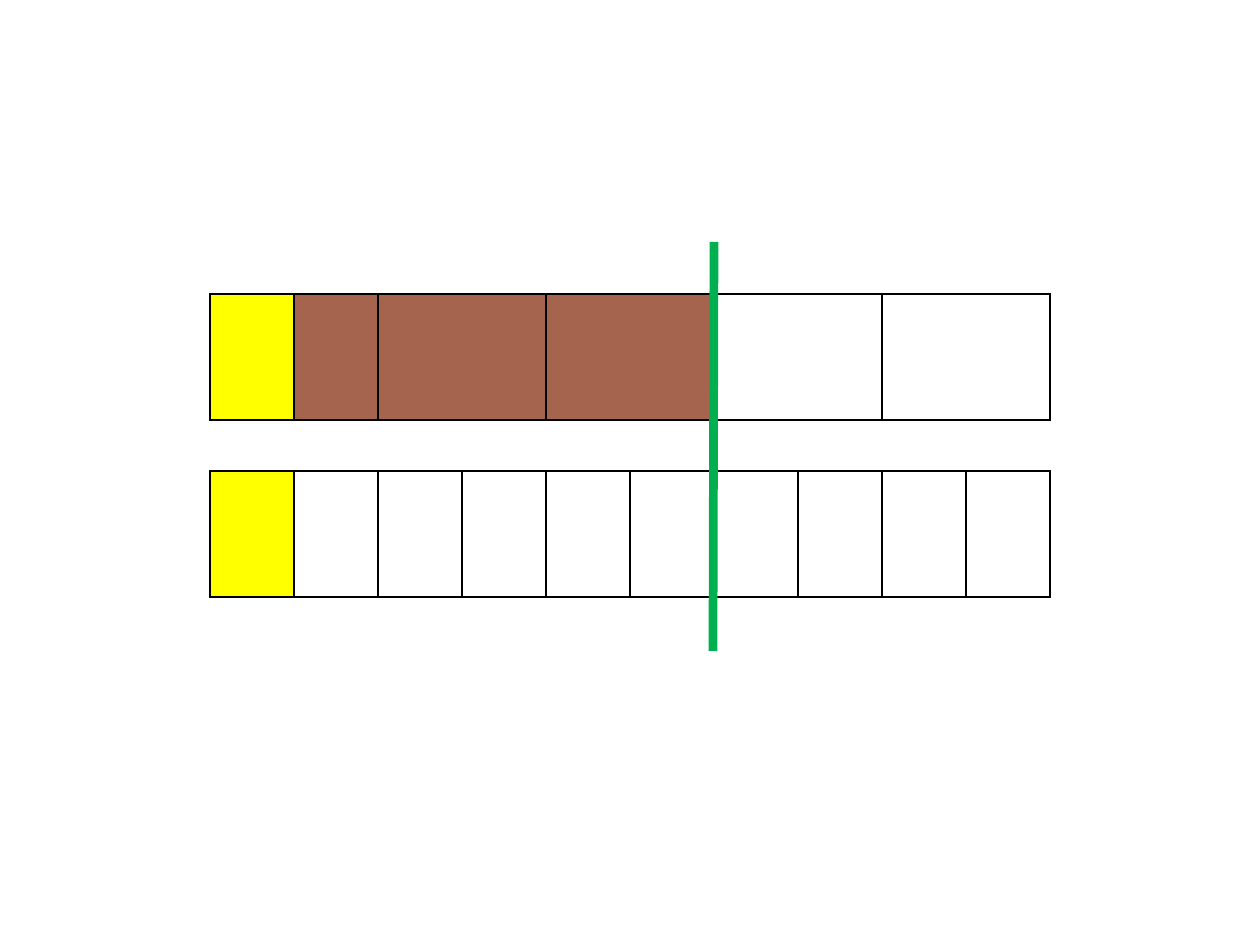
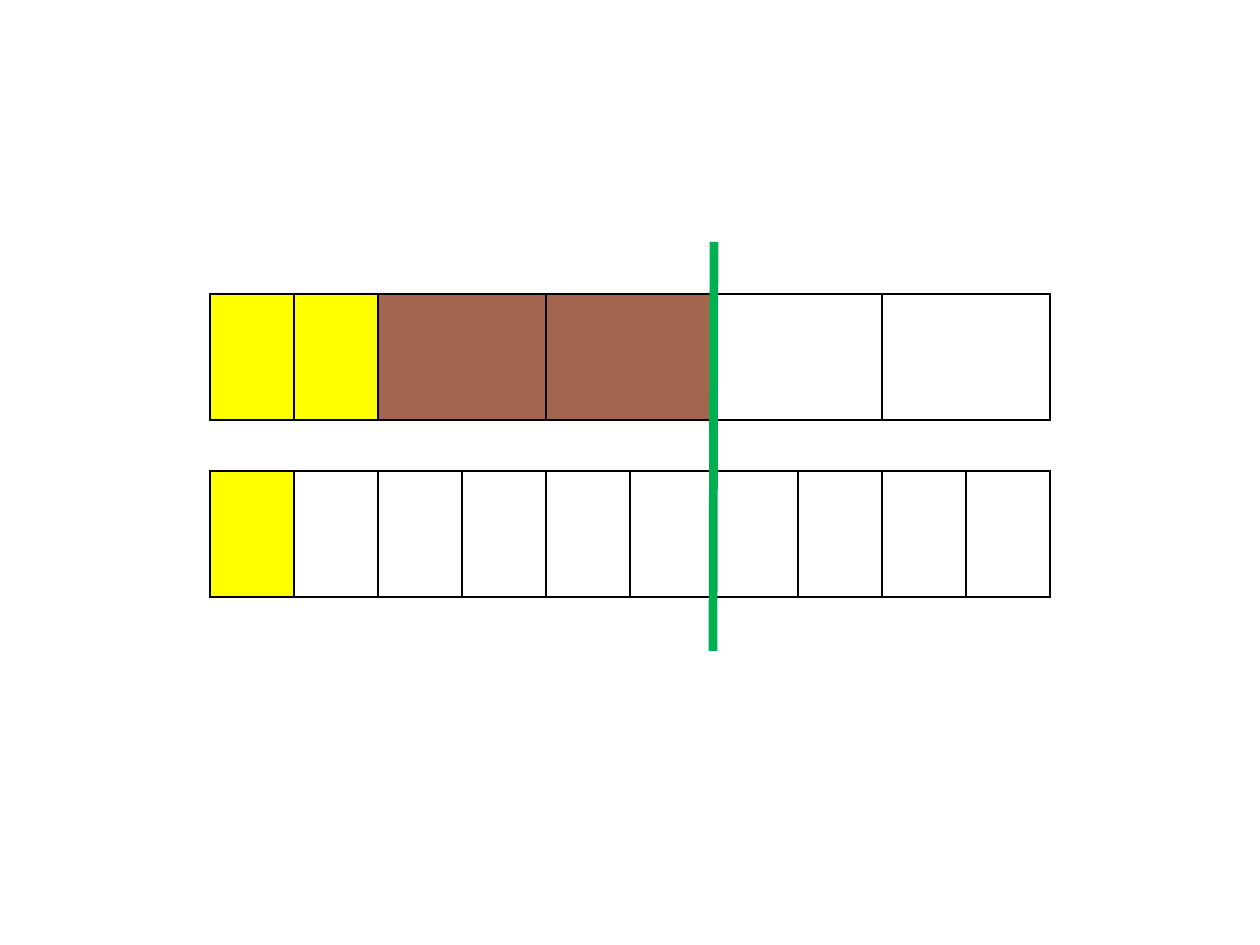
"""Build two slides that compare fifths with tenths on shaded bars."""
from dataclasses import dataclass

from lxml import etree
from pptx import Presentation
from pptx import util as u
from pptx.dml import color
from pptx.enum import shapes
from pptx.oxml import ns

SCALE = 914400 / 126


@dataclass(frozen=True)
class Theme:
    """Colours and line widths in points."""
    tenth: str = "FFFF00"
    fifth: str = "A5644E"
    border: str = "000000"
    marker: str = "00B050"
    border_width: float = 1
    marker_width: float = 5


THEME = Theme()
COLUMNS = 10
ROW_HEIGHTS = (126, 51, 126)
FIFTH_STARTS = (2, 4, 6, 8)
BARS_BOX = (210, 294, 840, sum(ROW_HEIGHTS))


def px(length):
    """Turn px into EMU."""
    return u.Emu(round(length * SCALE))


def set_borders(cell, visible_sides):
    """Draw the named sides of a cell and hide the others."""
    properties = cell._tc.get_or_add_tcPr()
    for side in "LRTB":
        line = etree.SubElement(properties, ns.qn(f"a:ln{side}"))
        line.set("w", str(u.Pt(THEME.border_width)))
        if side in visible_sides:
            fill = etree.SubElement(line, ns.qn("a:solidFill"))
            etree.SubElement(fill, ns.qn("a:srgbClr")).set("val", THEME.border)
        else:
            etree.SubElement(line, ns.qn("a:noFill"))


def set_fill(cell, shade):
    """Fill a cell with a colour, or leave it clear."""
    if shade:
        cell.fill.solid()
        cell.fill.fore_color.rgb = color.RGBColor.from_string(shade)
    else:
        cell.fill.background()


def add_bars(page, box, yellow_tenths):
    """Add the bar of fifths above the bar of tenths."""
    left, top, width, height = map(px, box)
    frame = page.shapes.add_table(len(ROW_HEIGHTS), COLUMNS, left, top, width, height)
    table = frame.table
    table.first_row = table.horz_banding = False
    for column in table.columns:
        column.width = px(box[2] / COLUMNS)
    for row, row_height in zip(table.rows, ROW_HEIGHTS):
        row.height = px(row_height)

    top_shades = [THEME.tenth] * yellow_tenths + [THEME.fifth] * (6 - yellow_tenths)
    top_shades += [None] * (COLUMNS - len(top_shades))
    bottom_shades = [THEME.tenth] + [None] * (COLUMNS - 1)
    row_styles = ((top_shades, "LRTB"), ([None] * COLUMNS, "TB"), (bottom_shades, "LRTB"))
    for row, (shades, sides) in enumerate(row_styles):
        for column, shade in enumerate(shades):
            cell = table.cell(row, column)
            set_borders(cell, sides)
            set_fill(cell, shade)

    for start in FIFTH_STARTS:
        table.cell(0, start).merge(table.cell(0, start + 1))
    table.cell(1, 0).merge(table.cell(1, COLUMNS - 1))


def add_marker(page, box):
    """Add the upright line at six tenths, reaching past both bars."""
    left, top, width, height = box
    x = left + width * 6 // COLUMNS
    line = page.shapes.add_connector(
        shapes.MSO_CONNECTOR.STRAIGHT, px(x), px(top - 52), px(x - 1), px(top + height + 54))
    line.line.color.rgb = color.RGBColor.from_string(THEME.marker)
    line.line.width = u.Pt(THEME.marker_width)
    etree.SubElement(line._element.spPr, ns.qn("a:effectLst"))


def add_fraction_slide(deck, yellow_tenths):
    """Add one slide with the bars and the marker."""
    page = deck.slides.add_slide(deck.slide_layouts[6])
    add_bars(page, BARS_BOX, yellow_tenths)
    add_marker(page, BARS_BOX)


def main():
    """Build and save the deck."""
    deck = Presentation()
    deck.slide_width, deck.slide_height = px(1260), px(945)
    for yellow_tenths in (1, 2):
        add_fraction_slide(deck, yellow_tenths)
    deck.save("out.pptx")


if __name__ == "__main__":
    main()
